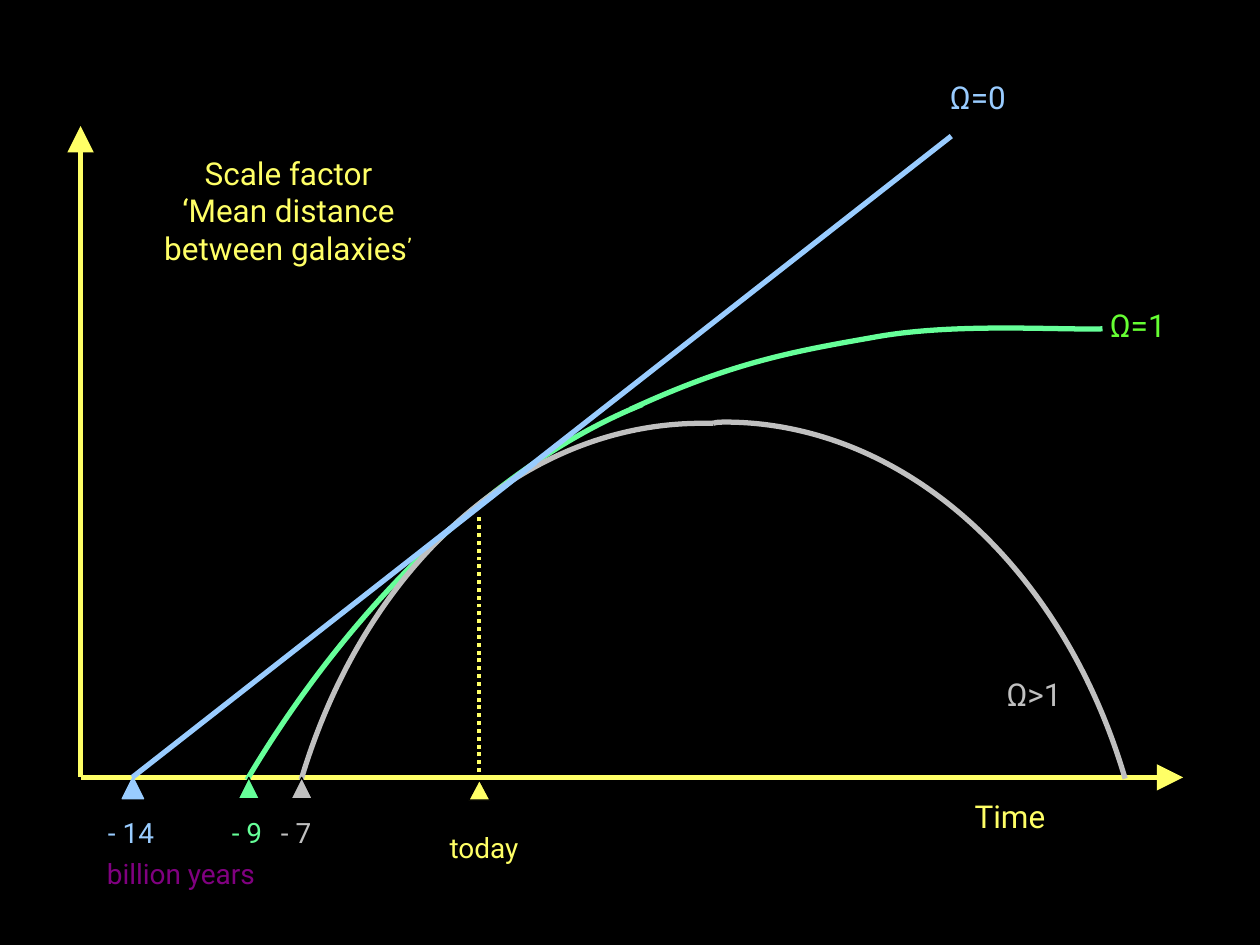
import pptx
import pptx.util
import pptx.dml.color
import pptx.enum.dml
import pptx.enum.shapes
import pptx.enum.text
import pptx.oxml.ns
import lxml.etree

Inches = pptx.util.Inches
qn = pptx.oxml.ns.qn
LEFT = pptx.enum.text.PP_ALIGN.LEFT
CENTER = pptx.enum.text.PP_ALIGN.CENTER
BLACK, YELLOW, BLUE = "000000", "FFFF66", "99CCFF"
GREEN, LIME, GREY, PURPLE = "66FF99", "66FF33", "C0C0C0", "800080"


def color(hex_text):
    return pptx.dml.color.RGBColor.from_string(hex_text)


def add_text(page, box, runs, size, hex_text, align=LEFT, wrap=False):
    """Place one paragraph; runs are (text, font) pairs, None is a line break."""
    shape = page.shapes.add_textbox(*(Inches(value) for value in box))
    frame = shape.text_frame
    frame.word_wrap = wrap
    frame.auto_size = pptx.enum.text.MSO_AUTO_SIZE.SHAPE_TO_FIT_TEXT
    para = frame.paragraphs[0]
    para.alignment = align
    for run in runs:
        if run is None:
            para.add_line_break()
            continue
        span = para.add_run()
        span.text, span.font.name = run
        span.font.size = pptx.util.Pt(size)
        span.font.color.rgb = color(hex_text)


def add_label(page, box, text, size, hex_text, align=LEFT):
    add_text(page, box, [(text, "Roboto")], size, hex_text, align)


def add_line(page, start, end, hex_text, width=3, arrow=None, dotted=False):
    """Draw a straight line; arrow is headEnd or tailEnd."""
    connector = page.shapes.add_connector(
        pptx.enum.shapes.MSO_CONNECTOR.STRAIGHT,
        *(Inches(value) for value in start + end))
    line = connector.line
    line.color.rgb = color(hex_text)
    line.width = pptx.util.Pt(width)
    if dotted:
        line.dash_style = pptx.enum.dml.MSO_LINE.ROUND_DOT
    properties = connector._element.spPr
    if arrow:
        lxml.etree.SubElement(properties.find(qn("a:ln")), qn("a:" + arrow),
                              type="triangle", w="lg", len="lg")
    lxml.etree.SubElement(properties, qn("a:effectLst"))


def add_marker(page, box, fill, outline):
    shape = page.shapes.add_shape(
        pptx.enum.shapes.MSO_SHAPE.ISOSCELES_TRIANGLE,
        *(Inches(value) for value in box))
    shape.shadow.inherit = False
    shape.fill.solid()
    shape.fill.fore_color.rgb = color(fill)
    shape.line.color.rgb = color(outline)
    shape.line.width = pptx.util.Pt(0.75)


def add_curve(page, points, hex_text):
    """Draw an open cubic curve: a start, then three points for each piece."""
    corners = [tuple(Inches(value) for value in point) for point in points]
    builder = page.shapes.build_freeform(*corners[0])
    builder.add_line_segments(corners[1:], close=False)
    shape = builder.convert_to_shape()
    shape.shadow.inherit = False
    shape.fill.background()
    shape.line.color.rgb = color(hex_text)
    shape.line.width = pptx.util.Pt(3)
    segments = list(shape._element.iter(qn("a:lnTo")))
    outline = segments[0].getparent()
    for first in range(0, len(segments), 3):
        piece = lxml.etree.SubElement(outline, qn("a:cubicBezTo"))
        for segment in segments[first:first + 3]:
            piece.append(segment[0])
            outline.remove(segment)


def add_axes(page, left, top, width, height):
    origin = (left, top + height)
    add_line(page, (left, top), origin, YELLOW, arrow="headEnd")
    add_line(page, origin, (left + width, top + height), YELLOW, arrow="tailEnd")
    title = [("Scale factor", "Roboto"), None,
             ("‘Mean distance between galaxies", "Roboto"), ("’", "Comic Neue")]
    add_text(page, (left + 0.28, top + 0.17, 2.74, 1.11), title, 18, YELLOW, CENTER, wrap=True)


def add_today(page, center, base):
    add_label(page, (center - 0.33, base + 0.37, 0.81, 0.37), "today", 16, YELLOW)
    add_marker(page, (center - 0.08, base + 0.02, 0.17, 0.16), YELLOW, BLACK)
    add_line(page, (center, base + 0.02), (center, 4.08), YELLOW, 2.25, dotted=True)


def add_flat_universe(page):
    add_curve(page, [(5, 3.25), (5.8, 2.88), (6.29, 2.79), (6.92, 2.68),
                     (7.55, 2.56), (8.37, 2.62), (8.75, 2.61)], GREEN)
    add_curve(page, [(5.1, 3.21), (3.98, 3.66), (2.81, 4.76), (1.96, 6.19)], GREEN)


def add_closed_universe(page):
    add_curve(page, [(5.66, 3.36), (5.63, 3.36), (5.6, 3.36), (5.57, 3.36),
                     (4.16, 3.36), (2.9, 4.48), (2.39, 6.19)], GREY)
    add_curve(page, [(5.66, 3.36), (5.69, 3.35), (5.72, 3.35), (5.75, 3.35),
                     (7.16, 3.35), (8.43, 4.48), (8.93, 6.18)], GREY)


def add_open_universe(page):
    add_line(page, (1.05, 6.17), (7.55, 1.08), BLUE)
    add_line(page, (3.5, 4.26), (4.25, 3.67), BLUE)


def add_omega_labels(page):
    for left, top, text, hex_text in ((7.89, 5.31, "Ω>1", GREY),
                                      (8.71, 2.38, "Ω=1", LIME),
                                      (7.44, 0.57, "Ω=0", BLUE)):
        add_label(page, (left, top, 0.74, 0.44), text, 18, hex_text)


def add_ages(page, base):
    for marker_left, text_left, width, text, fill, outline in (
            (0.97, 0.74, 0.6, "- 14", BLUE, BLUE),
            (1.89, 1.72, 0.48, "- 9", GREEN, BLACK),
            (2.31, 2.11, 0.48, "- 7", GREY, BLACK)):
        add_marker(page, (marker_left, base, 0.17, 0.17), fill, outline)
        add_label(page, (text_left, base + 0.25, width, 0.37), text, 16, fill, CENTER)
    add_label(page, (0.75, base + 0.58, 1.44, 0.37), "billion years", 16, PURPLE)


def main():
    deck = pptx.Presentation()
    deck.slide_width, deck.slide_height = Inches(10), Inches(7.5)
    page = deck.slides.add_slide(deck.slide_layouts[6])
    page.background.fill.solid()
    page.background.fill.fore_color.rgb = color(BLACK)
    base = 6.17
    add_axes(page, 0.64, 1, 8.75, base - 1)
    add_today(page, 3.8, base)
    add_flat_universe(page)
    add_label(page, (7.59, base + 0.11, 0.85, 0.44), "Time", 18, YELLOW, CENTER)
    add_closed_universe(page)
    add_omega_labels(page)
    add_open_universe(page)
    add_ages(page, base)
    deck.save("out.pptx")


if __name__ == "__main__":
    main()
